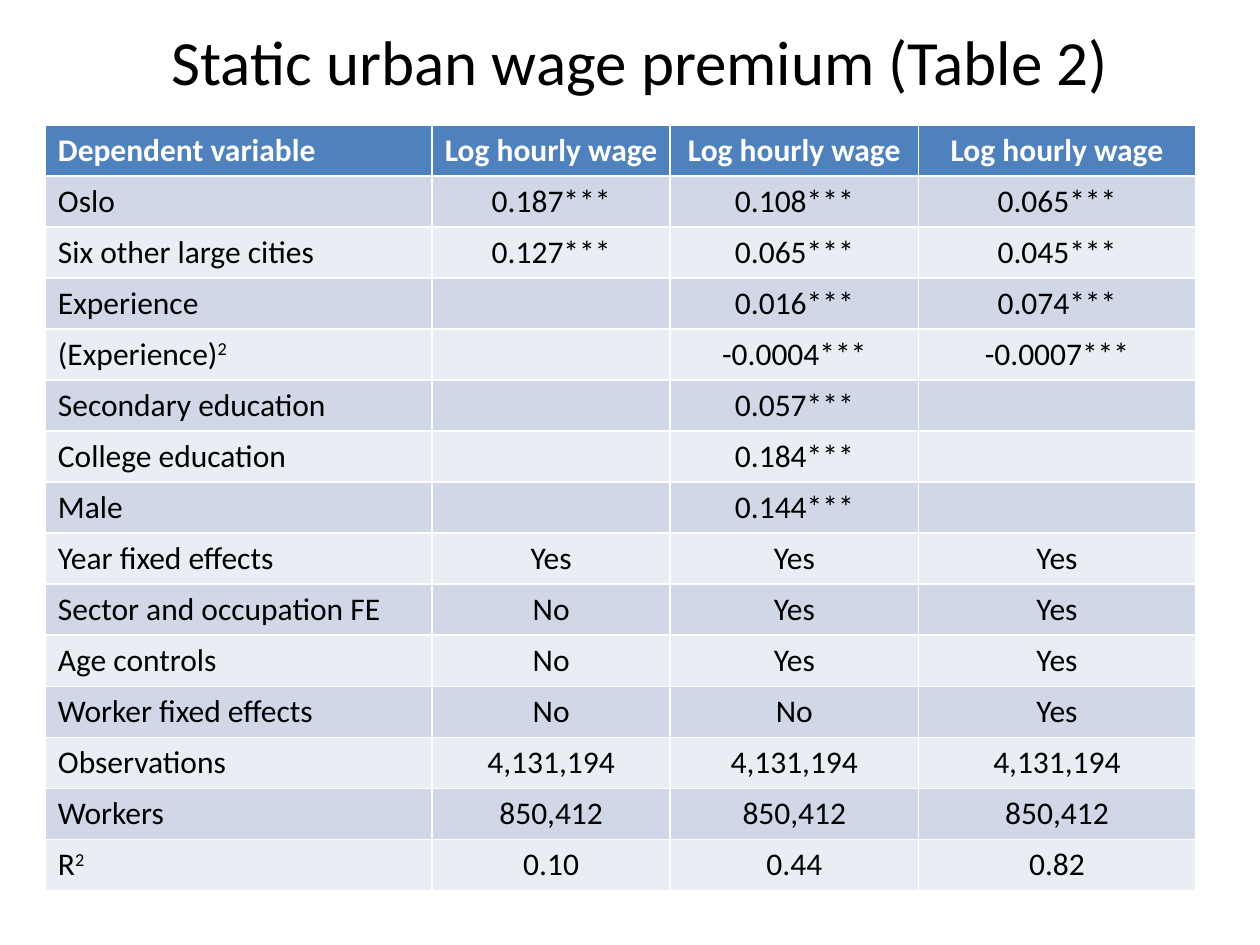
from typing import NamedTuple

from pptx import Presentation
from pptx.dml.color import RGBColor
from pptx.enum.text import MSO_ANCHOR, MSO_AUTO_SIZE, PP_ALIGN
from pptx.oxml.ns import qn
from pptx.util import Inches, Pt

WHITE = RGBColor(0xFF, 0xFF, 0xFF)
BLACK = RGBColor(0x00, 0x00, 0x00)
HEADER_BLUE = RGBColor(0x4F, 0x81, 0xBD)
BANDS = (RGBColor(0xD0, 0xD8, 0xE8), RGBColor(0xE9, 0xED, 0xF4))
FONT = "Calibri"
COLUMN_WIDTHS = (3.07, 1.89, 1.97, 2.2)
TABLE_HEIGHT = 6.08


class Row(NamedTuple):
    label: str
    values: tuple[str, str, str]
    exponent: str = ""


ROWS = (
    Row("Dependent variable", ("Log hourly wage",) * 3),
    Row("Oslo", ("0.187***", "0.108***", "0.065***")),
    Row("Six other large cities", ("0.127***", "0.065***", "0.045***")),
    Row("Experience", ("", "0.016***", "0.074***")),
    Row("(Experience)", ("", "-0.0004***", "-0.0007***"), "2"),
    Row("Secondary education", ("", "0.057***", "")),
    Row("College education", ("", "0.184***", "")),
    Row("Male", ("", "0.144***", "")),
    Row("Year fixed effects", ("Yes", "Yes", "Yes")),
    Row("Sector and occupation FE", ("No", "Yes", "Yes")),
    Row("Age controls", ("No", "Yes", "Yes")),
    Row("Worker fixed effects", ("No", "No", "Yes")),
    Row("Observations", ("4,131,194",) * 3),
    Row("Workers", ("850,412",) * 3),
    Row("R", ("0.10", "0.44", "0.82"), "2"),
)


def style_font(para, size: int, color: RGBColor, bold: bool = False) -> None:
    para.font.name = FONT
    para.font.size = Pt(size)
    para.font.bold = bold
    para.font.color.rgb = color


def add_title(page, text: str) -> None:
    title = page.shapes.title
    title.left, title.top = Inches(0.67), Inches(0.13)
    title.width, title.height = Inches(8.82), Inches(0.71)
    frame = title.text_frame
    frame.text = text
    frame.word_wrap = True
    frame.auto_size = MSO_AUTO_SIZE.SHAPE_TO_FIT_TEXT
    frame.vertical_anchor = MSO_ANCHOR.TOP
    para = frame.paragraphs[0]
    para.alignment = PP_ALIGN.CENTER
    style_font(para, 36, BLACK)


def fill_row(table, index: int, row: Row) -> None:
    is_header = index == 0
    fill = HEADER_BLUE if is_header else BANDS[(index - 1) % 2]
    for column, text in enumerate((row.label, *row.values)):
        cell = table.cell(index, column)
        cell.fill.solid()
        cell.fill.fore_color.rgb = fill
        para = cell.text_frame.paragraphs[0]
        para.alignment = PP_ALIGN.CENTER if column else PP_ALIGN.LEFT
        style_font(para, 18, WHITE if is_header else BLACK, is_header)
        if text:
            para.add_run().text = text
        else:
            para.font.size = None
            end = para._p.get_or_add_endParaRPr()
            end.set("sz", "1800")
        if column == 0 and row.exponent:
            span = para.add_run()
            span.text = row.exponent
            span.font._element.set("baseline", "30000")


def add_results_table(page) -> None:
    frame = page.shapes.add_table(
        len(ROWS), len(COLUMN_WIDTHS), Inches(0.36), Inches(0.99),
        Inches(sum(COLUMN_WIDTHS)), Inches(TABLE_HEIGHT))
    table = frame.table
    for column, width in zip(table.columns, COLUMN_WIDTHS):
        column.width = Inches(width)
    for index, row in enumerate(ROWS):
        table.rows[index].height = Inches(TABLE_HEIGHT / len(ROWS))
        fill_row(table, index, row)


def main() -> None:
    deck = Presentation()
    deck.slide_width, deck.slide_height = Inches(10), Inches(7.5)
    page = deck.slides.add_slide(deck.slide_layouts[5])
    add_results_table(page)
    add_title(page, "Static urban wage premium (Table 2)")
    deck.save("out.pptx")


if __name__ == "__main__":
    main()
